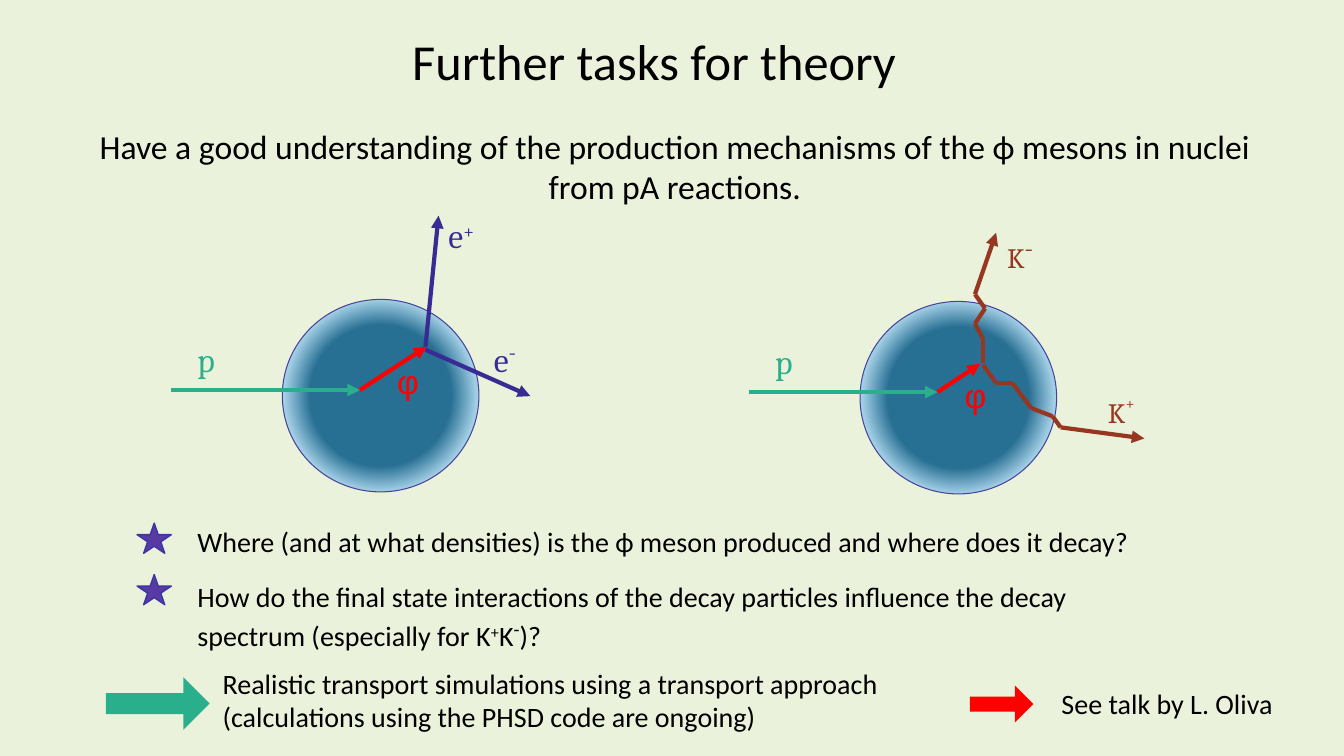
from itertools import pairwise

from lxml import etree
from pptx import Presentation
from pptx.dml.color import RGBColor
from pptx.enum.shapes import MSO_CONNECTOR, MSO_SHAPE
from pptx.enum.text import PP_ALIGN
from pptx.oxml.ns import qn
from pptx.util import Inches, Pt

STRAIGHT = MSO_CONNECTOR.STRAIGHT
OVAL, STAR, RIGHT_ARROW = MSO_SHAPE.OVAL, MSO_SHAPE.STAR_5_POINT, MSO_SHAPE.RIGHT_ARROW
LEFT, CENTER = PP_ALIGN.LEFT, PP_ALIGN.CENTER

BACKGROUND = RGBColor(0xEA, 0xF2, 0xDB)
BLACK = RGBColor(0x00, 0x00, 0x00)
RED = RGBColor(0xFF, 0x00, 0x00)
GREEN = RGBColor(0x29, 0xAF, 0x8C)
LEPTON_BLUE = RGBColor(0x38, 0x2C, 0x94)
KAON_BROWN = RGBColor(0x97, 0x37, 0x21)
NUCLEUS_CORE = RGBColor(0x27, 0x6F, 0x93)
NUCLEUS_EDGE = RGBColor(0xA4, 0xD0, 0xE7)
NUCLEUS_LINE = RGBColor(0x47, 0x43, 0x99)
STAR_FILL = RGBColor(0x57, 0x3A, 0xA2)
STAR_LINE = RGBColor(0x3D, 0x35, 0xA7)


def add_text(shapes, box, paragraphs, size, color=BLACK, font="Calibri", align=LEFT):
    """Each paragraph is a list of runs: (text, baseline percent, own size or None)."""
    frame = shapes.add_textbox(*map(Inches, box)).text_frame
    frame.word_wrap = True
    for index, runs in enumerate(paragraphs):
        paragraph = frame.add_paragraph() if index else frame.paragraphs[0]
        paragraph.alignment = align
        paragraph.font.name = font
        paragraph.font.size = Pt(size)
        paragraph.font.color.rgb = color
        for text, baseline, own_size in runs:
            run = paragraph.add_run()
            run.text = text
            if baseline:
                run._r.get_or_add_rPr().set("baseline", str(baseline * 1000))
            if own_size:
                run.font.size = Pt(own_size)


def plain(*lines):
    return [[(line, 0, None)] for line in lines]


def add_shape(shapes, kind, box, fill=None, line=None, width=1):
    shape = shapes.add_shape(kind, *map(Inches, box))
    shape.shadow.inherit = False
    if fill is not None:
        shape.fill.solid()
        shape.fill.fore_color.rgb = fill
    if line is None:
        shape.line.fill.background()
    else:
        shape.line.color.rgb = line
        shape.line.width = Pt(width)
    return shape


def add_track(shapes, origin, points, color):
    """Joined line segments, the last one ending in an arrowhead."""
    left, top = origin
    places = [(Inches(left + x), Inches(top + y)) for x, y in points]
    for start, end in pairwise(places):
        connector = shapes.add_connector(STRAIGHT, *start, *end)
        connector.line.color.rgb = color
        connector.line.width = Pt(3)
        etree.SubElement(connector._element.spPr, qn("a:effectLst"))
    etree.SubElement(connector.line._get_or_add_ln(), qn("a:tailEnd"), type="triangle")


def add_label(shapes, origin, place, runs, size, color, font="Cambria"):
    left, top = origin
    add_text(shapes, (left + place[0], top + place[1], 0.7, 0.5), [runs], size, color, font)


def add_nucleus(shapes, origin):
    nucleus = add_shape(shapes, OVAL, (*origin, 1.95, 1.91), line=NUCLEUS_LINE, width=0.75)
    nucleus.fill.gradient()
    stops = ((0.51, NUCLEUS_CORE), (0.7, NUCLEUS_EDGE))
    for stop, (position, color) in zip(nucleus.fill.gradient_stops, stops):
        stop.position = position
        stop.color.rgb = color
    # Radial gradient from the centre
    linear = nucleus._element.spPr.find(".//" + qn("a:lin"))
    radial = etree.Element(qn("a:path"))
    radial.set("path", "circle")
    etree.SubElement(radial, qn("a:fillToRect"), l="50000", t="50000", r="50000", b="50000")
    linear.getparent().replace(linear, radial)


def add_reaction(slide, origin, phi_end, phi_label, decay_color, tracks, labels, label_size):
    """Proton hits a nucleus and makes a φ, which decays; places count from the nucleus box."""
    shapes = slide.shapes.add_group_shape().shapes
    collision = (0.77, 0.9)
    add_nucleus(shapes, origin)
    add_track(shapes, origin, [(-1.1, 0.9), collision], GREEN)
    add_track(shapes, origin, [collision, phi_end], RED)
    for track in tracks:
        add_track(shapes, origin, track, decay_color)
    add_label(shapes, origin, (-0.94, 0.34), [("p", 0, None)], 24, GREEN)
    add_label(shapes, origin, phi_label, [("φ", 0, None)], 24, RED, "Arial")
    for place, runs in labels:
        add_label(shapes, origin, place, runs, label_size, decay_color)


def add_question(slide, left, top, text_top, width, paragraphs):
    add_shape(slide.shapes, STAR, (left, top, 0.34, 0.3), STAR_FILL, STAR_LINE)
    add_text(slide.shapes, (left + 0.5, text_top, width, 0.44), paragraphs, 20)


def add_conclusion(slide, arrow_box, color, text_box, lines):
    arrow = add_shape(slide.shapes, RIGHT_ARROW, arrow_box, color)
    arrow.adjustments[0] = 0.4
    add_text(slide.shapes, text_box, plain(*lines), 20)


def add_heading(slide):
    add_text(slide.shapes, (3.99, 0.25, 6.87, 0.71), plain("Further tasks for theory"), 36)
    add_text(slide.shapes, (0.52, 1.2, 12.42, 0.91), plain(
        "Have a good understanding of the production mechanisms of the ϕ mesons in nuclei ",
        "from pA reactions. "), 24, align=CENTER)


def main():
    presentation = Presentation()
    presentation.slide_width = Inches(13.33)
    presentation.slide_height = Inches(7.5)
    slide = presentation.slides.add_slide(presentation.slide_layouts[6])
    slide.background.fill.solid()
    slide.background.fill.fore_color.rgb = BACKGROUND

    add_heading(slide)

    # Decay into an electron pair
    add_reaction(
        slide, (2.8, 2.97), (1.43, 0.47), (1.04, 0.56), LEPTON_BLUE,
        tracks=[[(1.42, 0.47), (1.55, -0.83)], [(1.42, 0.5), (2.46, 0.96)]],
        labels=[((2, 0.29), [("e", 0, None), ("-", 30, 28)]),
                ((1.55, -0.89), [("e", 0, None), ("+", 30, None)])],
        label_size=24)

    # Decay into a kaon pair that scatters on its way out
    add_reaction(
        slide, (8.53, 2.99), (1.19, 0.62), (0.94, 0.68), KAON_BROWN,
        tracks=[[(1.22, 0.61), (1.22, 0.37), (1.14, 0.22), (1.24, 0.07), (1.14, -0.07),
                 (1.35, -0.68)],
                [(1.22, 0.63), (1.35, 0.81), (1.51, 0.81), (1.7, 1.06), (1.91, 1.14),
                 (1.99, 1.25), (2.82, 1.36)]],
        labels=[((2.36, 0.86), [("K", 0, None), ("+", 50, None)]),
                ((1.36, -0.82), [("K", 0, None), ("-", 24, 32)])],
        label_size=20)

    # Open questions
    add_question(slide, 1.36, 5.19, 5.15, 9.97, plain(
        "Where (and at what densities) is the ϕ meson produced and where does it decay?"))
    add_question(slide, 1.36, 5.7, 5.7, 10.74, plain(
        "How do the final state interactions of the decay particles influence the decay") + [
        [("spectrum (especially for K", 0, None), ("+", 30, None), ("K", 0, None),
         ("-", 30, 24), (")?", 0, None)]])

    # Conclusions
    add_conclusion(slide, (1.05, 6.72, 1.03, 0.52), GREEN, (2.11, 6.56, 6.96, 0.77),
                   ["Realistic transport simulations using a transport approach",
                    "(calculations using the PHSD code are ongoing)"])
    add_conclusion(slide, (9.62, 6.8, 0.63, 0.37), RED, (10.43, 6.76, 2.64, 0.44),
                   ["See talk by L. Oliva"])

    presentation.save("out.pptx")


if __name__ == "__main__":
    main()
